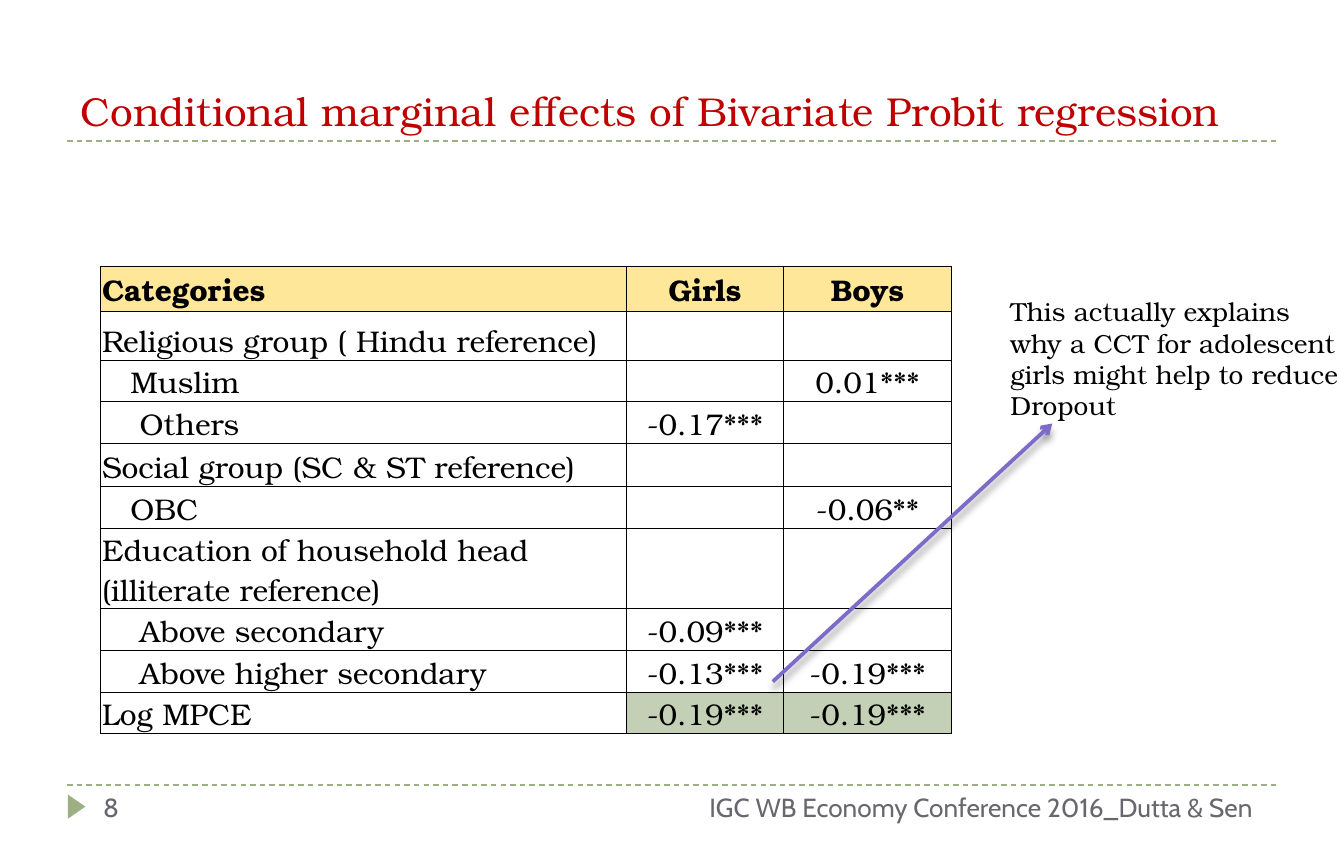
from dataclasses import dataclass

from lxml import etree
from pptx import Presentation
from pptx.dml.color import RGBColor
from pptx.enum.dml import MSO_LINE
from pptx.enum.shapes import MSO_CONNECTOR, MSO_SHAPE
from pptx.enum.text import MSO_ANCHOR, PP_ALIGN
from pptx.oxml.ns import qn
from pptx.util import Inches, Pt

LEFT, CENTER, RIGHT = PP_ALIGN.LEFT, PP_ALIGN.CENTER, PP_ALIGN.RIGHT
TOP, BOTTOM = MSO_ANCHOR.TOP, MSO_ANCHOR.BOTTOM
STRAIGHT, TRIANGLE = MSO_CONNECTOR.STRAIGHT, MSO_SHAPE.ISOSCELES_TRIANGLE
DASH = MSO_LINE.DASH

COLUMNS, ROWS = 100, 63  # slide grid
UNIT = Inches(0.1)


@dataclass(frozen=True)
class Theme:
    serif: str = "TeX Gyre Bonum"
    sans: str = "Cabin"
    title: str = "C00000"
    text: str = "000000"
    footer: str = "69676D"
    rule: str = "9CB084"
    header_fill: str = "FFE799"
    highlight_fill: str = "C4D0B5"
    arrow: str = "7E6BC9"
    title_size: float = 21.6
    table_size: float = 16
    small_size: float = 14


THEME = Theme()

HEADINGS = ("Categories", "Girls", "Boys")
# indent level, category, girls, boys, row height in grid rows
EFFECTS = [
    (0, "Religious group ( Hindu reference)", "", "", 3.65),
    (3, "Muslim", "", "0.01***", 3.1),
    (4, "Others", "-0.17***", "", 3.1),
    (0, "Social group (SC & ST reference)", "", "", 3.2),
    (3, "OBC", "", "-0.06**", 3.1),
    (0, "Education of household head (illiterate reference)", "", "", 6),
    (4, "Above secondary", "-0.09***", "", 3.1),
    (4, "Above higher secondary", "-0.13***", "-0.19***", 3.1),
    (0, "Log MPCE", "-0.19***", "-0.19***", 3.1),
]
HEADER_HEIGHT = 3.35
COLUMN_WIDTHS = (39.1, 11.7, 12.5)
INDENT_STEP = 0.7
NOTE = ("This actually explains", "why a CCT for adolescent",
        "girls might help to reduce", "Dropout")


def grid(*lengths):
    return [round(length * UNIT) for length in lengths]


def rgb(color):
    return RGBColor.from_string(color)


def write(frame, *lines, font=THEME.serif, size=THEME.small_size,
          color=THEME.text, bold=False, align=LEFT):
    for index, line in enumerate(lines):
        paragraph = frame.paragraphs[0] if index == 0 else frame.add_paragraph()
        paragraph.alignment = align
        target = paragraph.font
        if line:
            run = paragraph.add_run()
            run.text = line
            target = run.font
        target.name, target.size, target.bold = font, Pt(size), bold
        target.color.rgb = rgb(color)


def add_text(slide, box, *lines, wrap=True, **style):
    frame = slide.shapes.add_textbox(*grid(*box)).text_frame
    frame.word_wrap = wrap
    frame.vertical_anchor = TOP
    write(frame, *lines, **style)


def add_line(slide, start, end, color, width):
    line = slide.shapes.add_connector(STRAIGHT, *grid(*start, *end))
    line.line.color.rgb = rgb(color)
    line.line.width = Pt(width)
    effects = etree.SubElement(line._element.spPr, qn("a:effectLst"))
    return line, effects


def add_rule(slide, left, top, width):
    line, _ = add_line(slide, (left, top), (left + width, top), THEME.rule, 0.75)
    line.line.dash_style = DASH


def add_heading(slide, box):
    left, top, width, height = box
    add_rule(slide, left, top + height, width)
    title = slide.shapes.title
    title.left, title.top, title.width, title.height = grid(*box)
    title.text_frame.vertical_anchor = BOTTOM
    write(title.text_frame, "Conditional marginal effects of Bivariate Probit regression",
          size=THEME.title_size, color=THEME.title)


def add_footer(slide, box):
    left, top, width, height = box
    add_rule(slide, left, top, width)
    marker = slide.shapes.add_shape(TRIANGLE, *grid(left - 0.2, top + 0.95, 1.8, 1.3))
    marker.rotation = 90
    marker.shadow.inherit = False
    marker.fill.solid()
    marker.fill.fore_color.rgb = rgb(THEME.rule)
    marker.line.fill.background()
    style = dict(font=THEME.sans, color=THEME.footer)
    add_text(slide, (left + 26.7, top, 62.5, height),
             "IGC WB Economy Conference 2016_Dutta & Sen", align=RIGHT, **style)
    add_text(slide, (left + 1.7, top, 21.7, height), "8", **style)


def add_borders(cell):
    properties = cell._tc.get_or_add_tcPr()
    for position, side in enumerate(("lnL", "lnR", "lnT", "lnB")):
        border = etree.Element(qn(f"a:{side}"), w=str(Pt(0.5)))
        fill = etree.SubElement(border, qn("a:solidFill"))
        etree.SubElement(fill, qn("a:srgbClr"), val=THEME.text)
        properties.insert(position, border)


def fill_cell(cell, text, indent=0, fill=None, **style):
    cell.vertical_anchor = BOTTOM
    cell.margin_left, cell.margin_right, cell.margin_top, cell.margin_bottom = grid(
        0.1 + indent * INDENT_STEP, 0.1, 0.1, 0)
    if fill:
        cell.fill.solid()
        cell.fill.fore_color.rgb = rgb(fill)
    else:
        cell.fill.background()
    add_borders(cell)
    write(cell.text_frame, text, size=THEME.table_size, **style)


def add_effects_table(slide, left, top):
    heights = [HEADER_HEIGHT] + [effect[-1] for effect in EFFECTS]
    table = slide.shapes.add_table(
        len(heights), len(HEADINGS),
        *grid(left, top, sum(COLUMN_WIDTHS), sum(heights))).table
    for column, width in zip(table.columns, grid(*COLUMN_WIDTHS)):
        column.width = width
    for row, height in zip(table.rows, grid(*heights)):
        row.height = height
    for column, heading in enumerate(HEADINGS):
        fill_cell(table.cell(0, column), heading, fill=THEME.header_fill,
                  bold=True, align=CENTER if column else LEFT)
    for row, (indent, category, girls, boys, _) in enumerate(EFFECTS, start=1):
        fill_cell(table.cell(row, 0), category, indent)
        fill = THEME.highlight_fill if category == "Log MPCE" else None
        for column, effect in enumerate((girls, boys), start=1):
            fill_cell(table.cell(row, column), effect, fill=fill, align=CENTER)


def add_policy_note(slide, box):
    """Place the note and the arrow that leads to it from the table."""
    left, top, _, height = box
    add_text(slide, box, *NOTE, wrap=False)
    arrow, effects = add_line(slide, (left - 16.7, top + height + 18.8),
                              (left + 4.1, top + height - 0.4), THEME.arrow, 2)
    etree.SubElement(arrow.line._get_or_add_ln(), qn("a:tailEnd"), type="arrow")
    shadow = etree.SubElement(effects, qn("a:outerShdw"), blurRad=str(Pt(4)),
                              dist=str(Pt(3.4)), dir="5400000", rotWithShape="0")
    shade = etree.SubElement(shadow, qn("a:srgbClr"), val=THEME.text)
    etree.SubElement(shade, qn("a:alpha"), val="40000")


def main():
    deck = Presentation()
    deck.slide_width, deck.slide_height = grid(COLUMNS, ROWS)
    slide = deck.slides.add_slide(deck.slide_layouts[5])
    add_heading(slide, (5, 2.1, 90, 8.4))
    add_footer(slide, (5, 58.4, 90, 3.4))
    add_effects_table(slide, 7.5, 19.8)
    add_policy_note(slide, (74.2, 21.5, 26.6, 10.4))
    deck.save("out.pptx")


if __name__ == "__main__":
    main()
